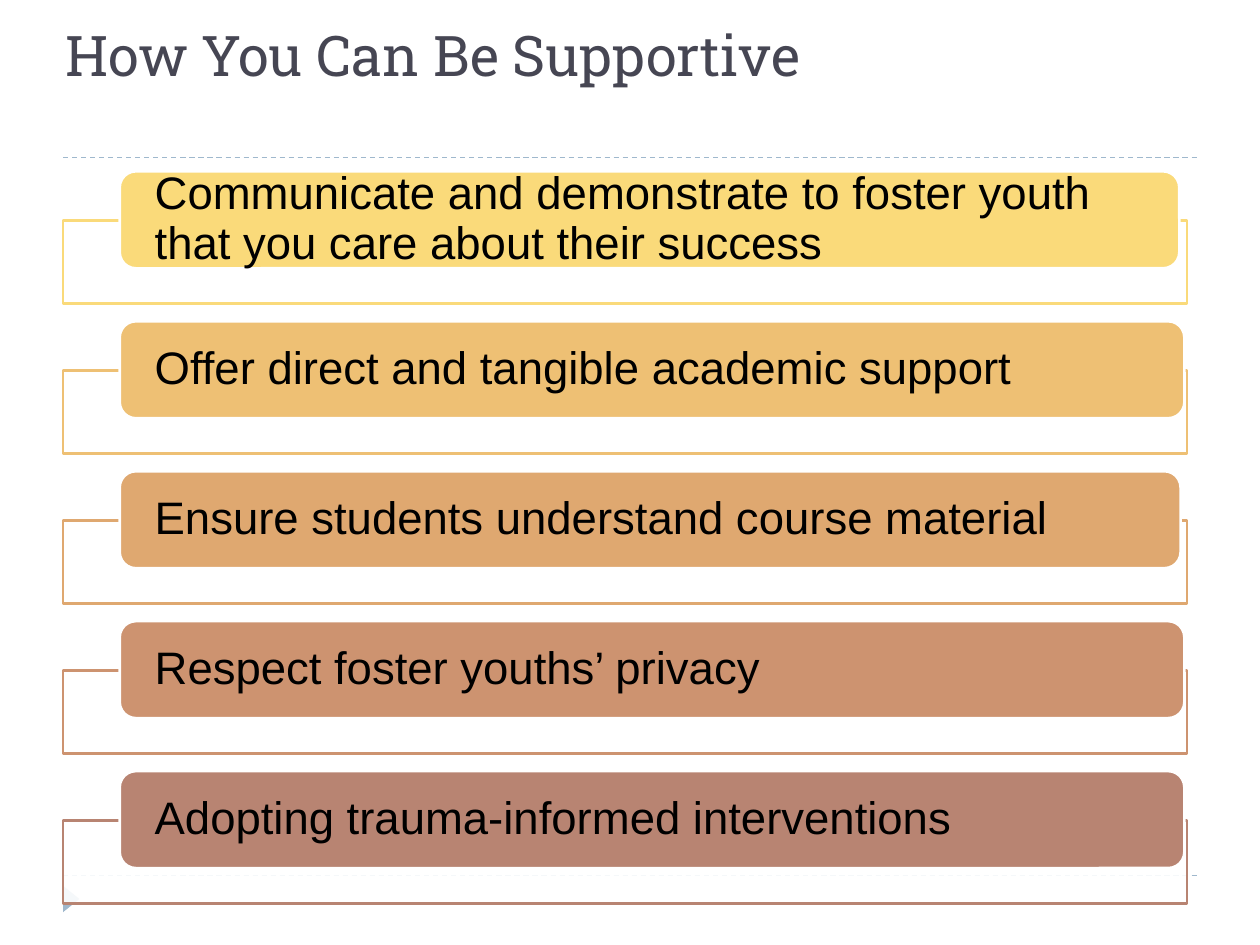
from lxml.etree import SubElement
from pptx import Presentation
from pptx.dml.color import RGBColor
from pptx.enum.dml import MSO_LINE
from pptx.enum.shapes import MSO_CONNECTOR, MSO_SHAPE
from pptx.enum.text import MSO_ANCHOR, MSO_AUTO_SIZE, PP_ALIGN
from pptx.oxml.ns import qn
from pptx.util import Emu, Pt

PX_PER_INCH = 100
COLORS = {
    "title": "464653",
    "accent": "9FB8CD",
    "white": "FFFFFF",
    "text": "000000",
    "yellow": "FADA7A",
    "gold": "EEC074",
    "orange": "DFA870",
    "copper": "CD9370",
    "brown": "B88472",
}
SUPPORTS = [
    ("Communicate and demonstrate to foster youth that you care about their success", "yellow", 841),
    ("Offer direct and tangible academic support", "gold", 845),
    ("Ensure students understand course material", "orange", 842),
    ("Respect foster youths’ privacy", "copper", 845),
    ("Adopting trauma-informed interventions", "brown", 845),
]
FIRST_TOP = 136
ROW_PITCH = 119


def px(value):
    return Emu(value * 914400 // PX_PER_INCH)


def color(name):
    return RGBColor.from_string(COLORS[name])


def format_text(paragraph, font_name, size, color_name):
    paragraph.alignment = PP_ALIGN.LEFT
    for run in paragraph.runs:
        run.font.name = font_name
        run.font.size = Pt(size)
        run.font.color.rgb = color(color_name)


def add_shape(slide, kind, left, top, width, height, fill, line=None):
    shape = slide.shapes.add_shape(kind, px(left), px(top), px(width), px(height))
    shape.shadow.inherit = False
    shape.fill.solid()
    shape.fill.fore_color.rgb = color(fill)
    if line:
        shape.line.color.rgb = color(line)
        shape.line.width = Pt(1.5)
    else:
        shape.line.fill.background()
    return shape


def add_divider(slide, top):
    divider = slide.shapes.add_connector(
        MSO_CONNECTOR.STRAIGHT, px(50), px(top), px(950), px(top)
    )
    divider.line.color.rgb = color("accent")
    divider.line.width = Pt(0.75)
    divider.line.dash_style = MSO_LINE.DASH
    SubElement(divider.element.spPr, qn("a:effectLst"))


def add_title(slide, text):
    title = slide.shapes.title
    title.left, title.top, title.width, title.height = px(42), px(8), px(900), px(67)
    frame = title.text_frame
    frame.text = text
    frame.auto_size = MSO_AUTO_SIZE.NONE
    frame.vertical_anchor = MSO_ANCHOR.BOTTOM
    format_text(frame.paragraphs[0], "Roboto Slab", 32, "title")


def add_frame(slide, top, color_name):
    frame = add_shape(slide, MSO_SHAPE.RECTANGLE, 50, top, 892, 66, "white", color_name)
    fill_color = frame.element.spPr.find(qn("a:solidFill")).find(qn("a:srgbClr"))
    SubElement(fill_color, qn("a:alpha"), val="90000")


def add_label(slide, top, width, text, color_name):
    label = add_shape(
        slide, MSO_SHAPE.ROUNDED_RECTANGLE, 95, top, width, 77, color_name, "white"
    )
    frame = label.text_frame
    frame.text = text
    frame.word_wrap = True
    frame.vertical_anchor = MSO_ANCHOR.MIDDLE
    frame.margin_left = frame.margin_right = px(24)
    frame.margin_top = frame.margin_bottom = 0
    paragraph = frame.paragraphs[0]
    paragraph.line_spacing = 0.9
    format_text(paragraph, "Arial", 26, "text")


def main():
    presentation = Presentation()
    presentation.slide_width = px(1000)
    presentation.slide_height = px(750)
    slide = presentation.slides.add_slide(presentation.slide_layouts[5])
    for top in (695, 125):
        add_divider(slide, top)
    marker = add_shape(slide, MSO_SHAPE.ISOSCELES_TRIANGLE, 46, 707, 21, 13, "accent")
    marker.rotation = 90
    add_title(slide, "How You Can Be Supportive")
    for index, (text, color_name, width) in enumerate(SUPPORTS):
        top = FIRST_TOP + index * ROW_PITCH
        add_frame(slide, top + 39, color_name)
        add_label(slide, top, width, text, color_name)
    presentation.save("out.pptx")


if __name__ == "__main__":
    main()
